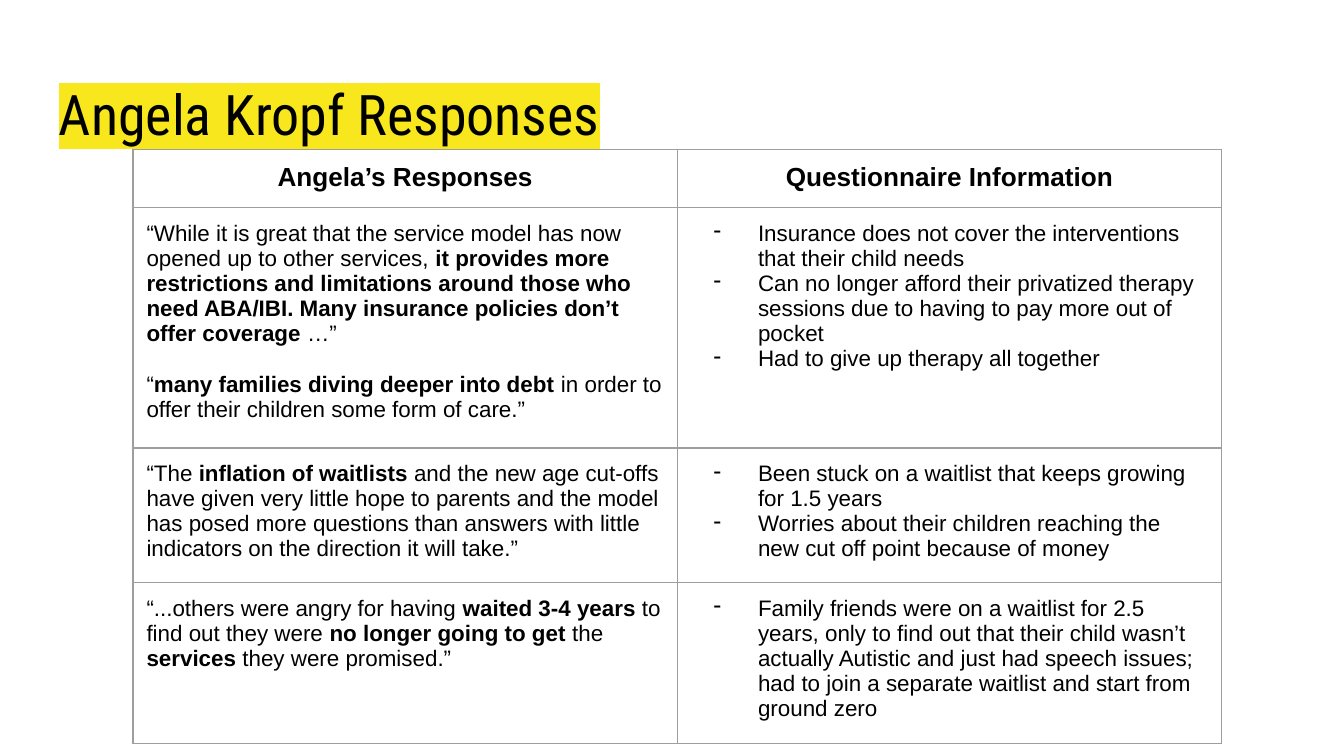
from dataclasses import dataclass

from lxml.etree import SubElement
from pptx import Presentation
from pptx.dml.color import RGBColor
from pptx.enum.text import MSO_ANCHOR, PP_ALIGN
from pptx.oxml.ns import qn
from pptx.util import Inches, Pt


@dataclass(frozen=True)
class Theme:
    ink: str = "000000"
    marker: str = "F8E71C"
    rule: str = "9E9E9E"
    title_font: str = "Roboto Condensed"
    body_font: str = "Arial"
    title_size: int = 30
    head_size: int = 14
    body_size: int = 12
    rule_width: float = 0.75
    inset: float = 0.1


@dataclass(frozen=True)
class Para:
    """Text whose odd parts, split at *, are bold."""
    text: str
    bullet: bool = False
    head: bool = False
    before: float = 0


@dataclass(frozen=True)
class Row:
    response: list[Para]
    information: list[Para]


def bullets(*texts: str) -> list[Para]:
    return [Para(t, bullet=True) for t in texts]


THEME = Theme()
WIDTH = 10
HEIGHT = WIDTH * 9 / 16
TABLE_LEFT, TABLE_TOP = 0.99, 1.11
COL_WIDTH = 4.05
HEAD_HEIGHT, ROW_HEIGHT = 0.43, 0.42

ROWS = [
    Row([Para("Angela’s Responses", head=True)],
        [Para("Questionnaire Information", head=True)]),
    Row([Para("“While it is great that the service model has now opened up to other "
              "services, *it provides more restrictions and limitations around those "
              "who need ABA/IBI. Many insurance policies don’t offer coverage *…”"),
         Para("“*many families diving deeper into debt *in order to offer their "
              "children some form of care.”", before=13.6)],
        bullets("Insurance does not cover the interventions that their child needs",
                "Can no longer afford their privatized therapy sessions due to having "
                "to pay more out of pocket",
                "Had to give up therapy all together")),
    Row([Para("“The *inflation of waitlists* and the new age cut-offs have given very "
              "little hope to parents and the model has posed more questions than "
              "answers with little indicators on the direction it will take.”")],
        bullets("Been stuck on a waitlist that keeps growing for 1.5 years",
                "Worries about their children reaching the new cut off point because "
                "of money")),
    Row([Para("“...others were angry for having *waited 3-4 years* to find out they "
              "were *no longer going to get *the *services *they were promised.”")],
        bullets("Family friends were on a waitlist for 2.5 years, only to find out that "
                "their child wasn’t actually Autistic and just had speech issues; had "
                "to join a separate waitlist and start from ground zero")),
]


def add_color(parent, tag: str, color: str):
    el = SubElement(parent, qn(tag))
    SubElement(el, qn("a:srgbClr"), val=color)
    return el


def set_font(font, name: str, size: int) -> None:
    font.name, font.size = name, Pt(size)
    font.color.rgb = RGBColor.from_string(THEME.ink)


def set_bullet(p) -> None:
    pPr = p._p.get_or_add_pPr()
    pPr.set("marL", str(Inches(0.5)))
    pPr.set("indent", str(Inches(-0.33)))
    add_color(pPr, "a:buClr", THEME.ink)
    SubElement(pPr, qn("a:buChar"), char="-")


def set_borders(cell) -> None:
    tcPr = cell._tc.get_or_add_tcPr()
    for side in ("a:lnL", "a:lnR", "a:lnT", "a:lnB"):
        ln = SubElement(tcPr, qn(side), w=str(Pt(THEME.rule_width)))
        add_color(ln, "a:solidFill", THEME.rule)


def fill_cell(cell, paras: list[Para]) -> None:
    set_borders(cell)
    cell.fill.background()
    cell.margin_left = cell.margin_right = Inches(THEME.inset)
    cell.margin_top = cell.margin_bottom = Inches(THEME.inset)
    tf = cell.text_frame
    for i, para in enumerate(paras):
        p = tf.add_paragraph() if i else tf.paragraphs[0]
        size = THEME.head_size if para.head else THEME.body_size
        if para.bullet:
            set_bullet(p)
        if para.head:
            p.alignment = PP_ALIGN.CENTER
        if para.before:
            p.space_before = Pt(para.before)
        for j, part in enumerate(para.text.split("*")):
            r = p.add_run()
            r.text = part
            set_font(r.font, THEME.body_font, size)
            r.font.bold = para.head or j % 2 == 1
        # The paragraph mark would otherwise be 18 pt and stretch the row.
        SubElement(p._p, qn("a:endParaRPr"), sz=str(size * 100))


def add_title(s, text: str) -> None:
    sp = s.shapes.add_textbox(Inches(0.34), Inches(0.49), Inches(9.32), Inches(0.63))
    tf = sp.text_frame
    tf.word_wrap = True
    tf.vertical_anchor = MSO_ANCHOR.TOP
    tf.margin_left = tf.margin_right = Inches(THEME.inset)
    tf.margin_top = tf.margin_bottom = Inches(THEME.inset)
    r = tf.paragraphs[0].add_run()
    r.text = text
    set_font(r.font, THEME.title_font, THEME.title_size)
    rPr = r._r.get_or_add_rPr()
    # The schema wants the highlight directly after the fill.
    rPr.find(qn("a:solidFill")).addnext(add_color(rPr, "a:highlight", THEME.marker))


def add_responses(s, rows: list[Row]) -> None:
    heights = [HEAD_HEIGHT] + [ROW_HEIGHT] * (len(rows) - 1)
    frame = s.shapes.add_table(len(rows), 2, Inches(TABLE_LEFT), Inches(TABLE_TOP),
                               Inches(2 * COL_WIDTH), Inches(sum(heights)))
    table = frame.table
    table.first_row = table.horz_banding = False
    for col in table.columns:
        col.width = Inches(COL_WIDTH)
    for i, (row, height) in enumerate(zip(rows, heights)):
        table.rows[i].height = Inches(height)
        fill_cell(table.cell(i, 0), row.response)
        fill_cell(table.cell(i, 1), row.information)


def main() -> None:
    prs = Presentation()
    prs.slide_width, prs.slide_height = Inches(WIDTH), Inches(HEIGHT)
    s = prs.slides.add_slide(prs.slide_layouts[6])
    add_title(s, "Angela Kropf Responses")
    add_responses(s, ROWS)
    prs.save("out.pptx")


if __name__ == "__main__":
    main()
